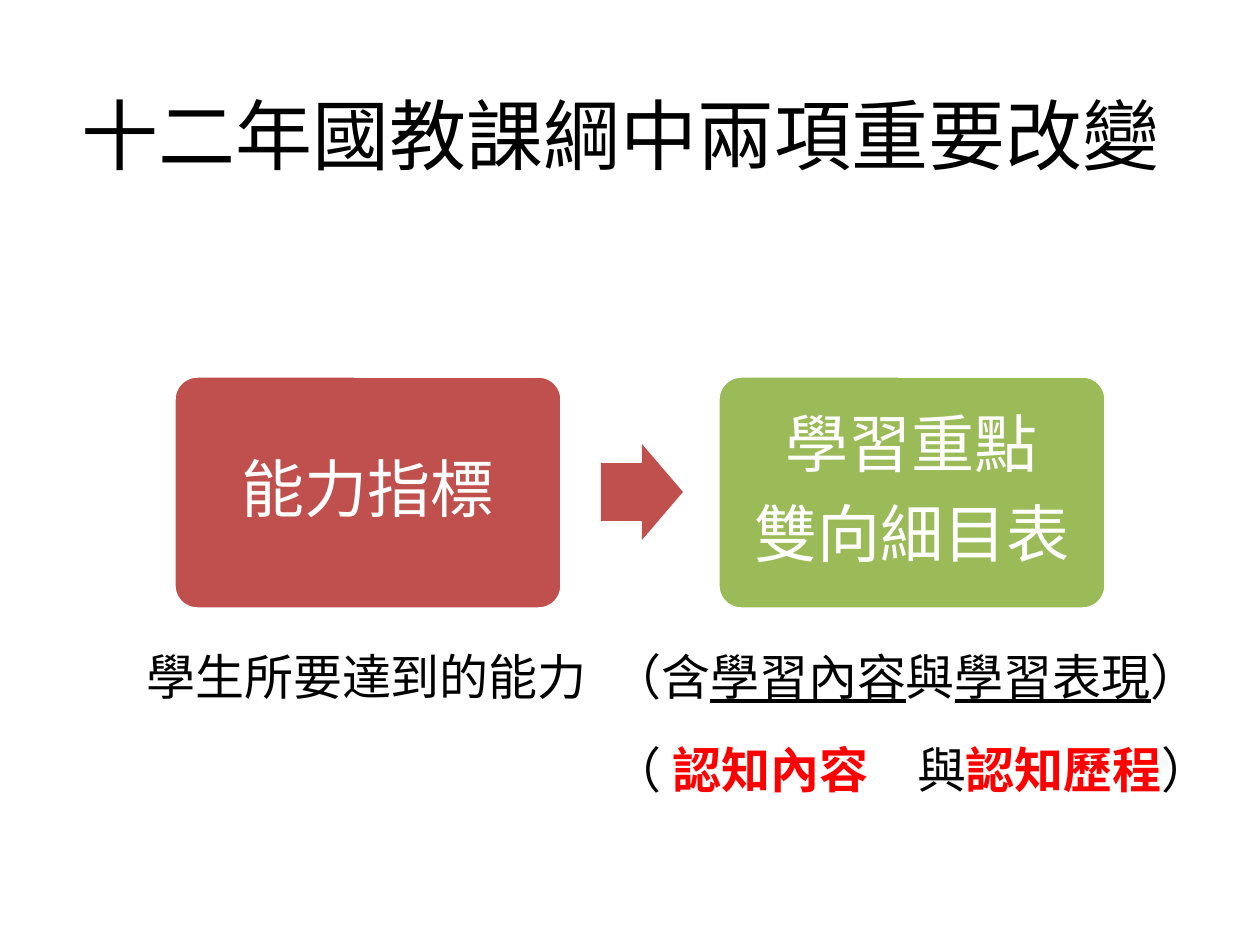
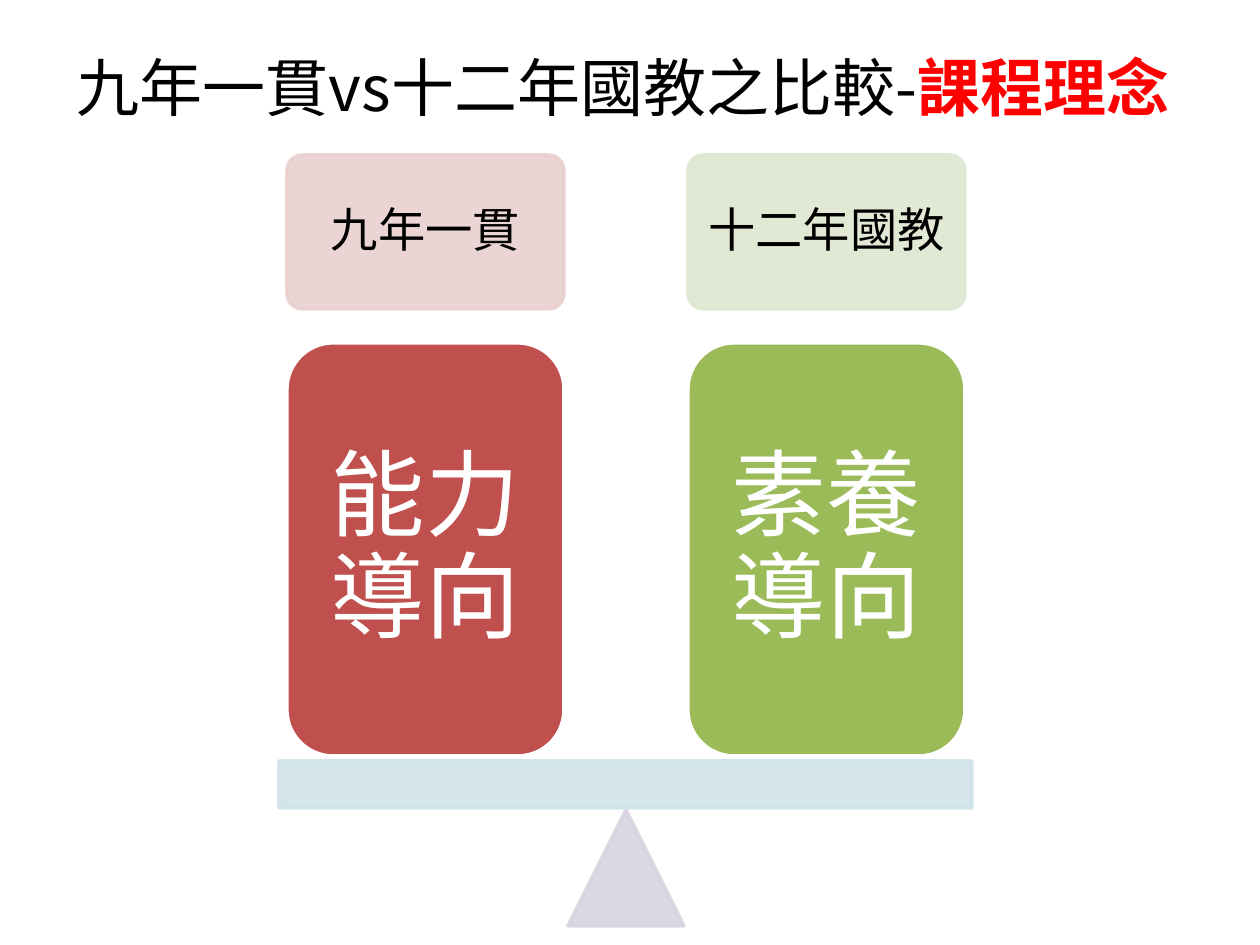
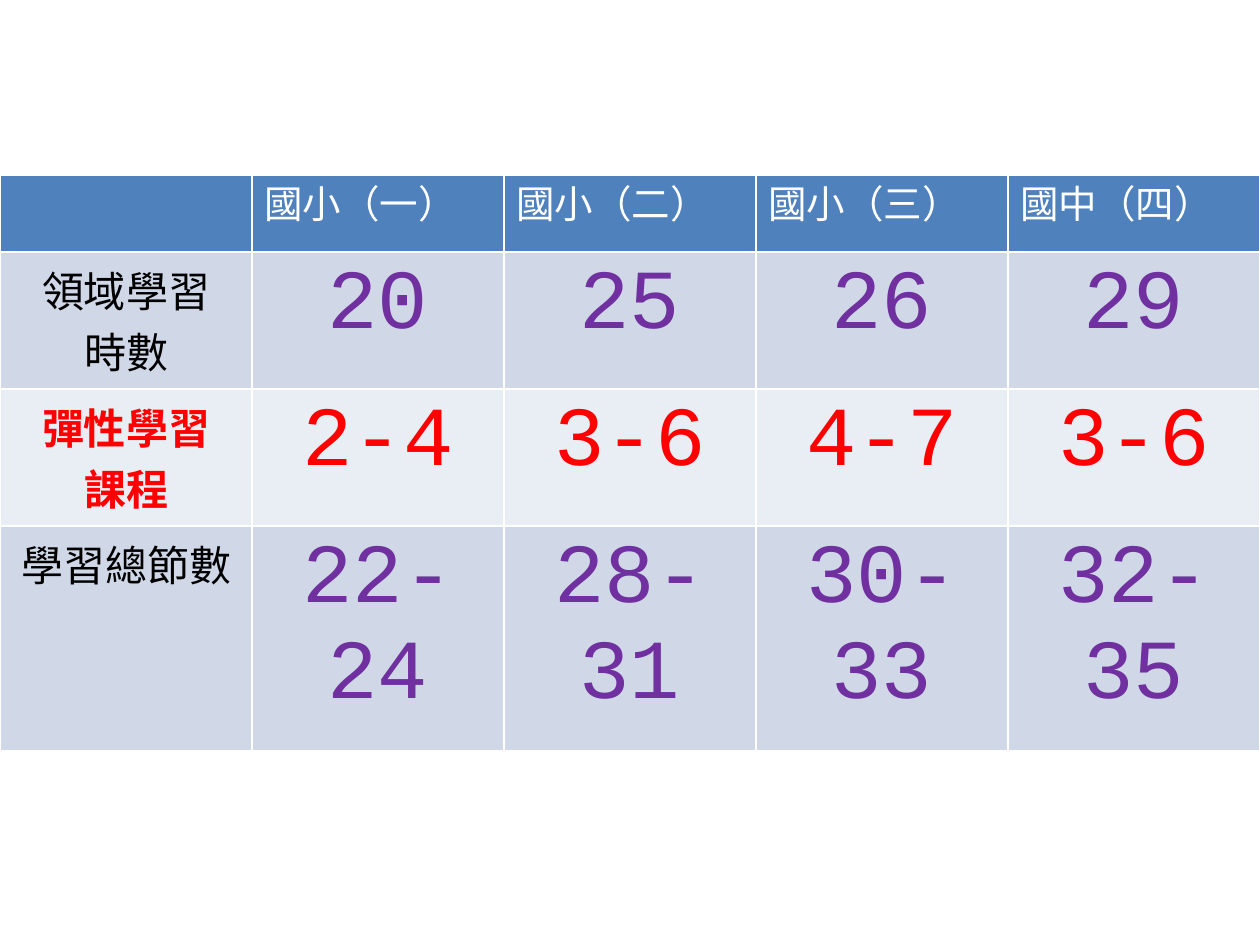
"""Build three slides on the changes brought by the twelve-year curriculum."""
from lxml import etree
from pptx import Presentation
from pptx import util as u
from pptx.dml.color import RGBColor
from pptx.enum import shapes, text
from pptx.oxml.ns import qn

PX = 914400 / 126
SANS, CJK, MONO = "Calibri", "Noto Sans CJK SC", "Courier New"
BLACK, WHITE, RED, PURPLE = "000000", "FFFFFF", "FF0000", "7030A0"
BRICK, OLIVE, BLUE = "C0504D", "9BBB59", "4F81BD"
PINK, PALE_GREEN, LILAC, PALE_BLUE = "E8D0D0", "DEE7D1", "D8D3E0", "D0E3EA"
BAND_DARK, BAND_LIGHT = "D0D8E8", "E9EDF4"
ROUND, PLAIN = shapes.MSO_SHAPE.ROUNDED_RECTANGLE, shapes.MSO_SHAPE.RECTANGLE
ARROW, TRIANGLE = shapes.MSO_SHAPE.RIGHT_ARROW, shapes.MSO_SHAPE.ISOSCELES_TRIANGLE
CENTER, LEFT = text.PP_ALIGN.CENTER, text.PP_ALIGN.LEFT
UNDERLINED, STRONG = {"underline": True}, {"color": RED, "bold": True}

CHANGES_TITLE = ["十二年國教課綱中兩項重要改變"]
CHANGES = [(174, BRICK, [["能力指標"]]), (718, OLIVE, [["學習重點"], ["雙向細目表"]])]
NOTES = [
    ((134, 582, 510, 149), ["學生所要達到的能力"]),
    ((600, 582, 638, 149), ["（含", ("學習內容", UNDERLINED), "與", ("學習表現", UNDERLINED), "）"]),
    ((600, 675, 638, 149), ["（ ", ("認知內容　", STRONG), "與", ("認知歷程", STRONG), "）"]),
]
IDEAS_TITLE = ["九年一貫vs十二年國教之比較-", ("課程理念", STRONG)]
IDEAS = [(287, "九年一貫", PINK, "能力導向", BRICK), (688, "十二年國教", PALE_GREEN, "素養導向", OLIVE)]
STAGES = ["", "國小（一）", "國小（二）", "國小（三）", "國中（四）"]
HOURS = [
    (["領域學習\n時數", "20", "25", "26", "29"], BAND_DARK, BLACK, PURPLE),
    (["彈性學習\n課程", "2-4", "3-6", "4-7", "3-6"], BAND_LIGHT, RED, RED),
    (["學習總節數", "22-24", "28-31", "30-33", "32-35"], BAND_DARK, BLACK, PURPLE),
]
ROW_HEIGHTS = [77, 137, 137, 225]


def px(length):
    return u.Emu(round(length * PX))


def rgb(value):
    return RGBColor.from_string(value)


def paint(fill, color, alpha=None):
    fill.solid()
    fill.fore_color.rgb = rgb(color)
    if alpha:
        tint = fill._xPr.find(qn("a:solidFill"))[0]
        etree.SubElement(tint, qn("a:alpha")).set("val", str(alpha * 1000))


def write(frame, paragraphs, size, font=SANS, color=BLACK, bold=False, align=CENTER,
          spacing=1.0, after=0, inset=None, anchor=None):
    """Fill a text frame with paragraphs, each a list of strings or (string, format) pairs."""
    frame.word_wrap = True
    if anchor is not None:
        frame.vertical_anchor = anchor
    if inset is not None:
        frame.margin_left = frame.margin_right = frame.margin_top = frame.margin_bottom = px(inset)
    for index, parts in enumerate(paragraphs):
        para = frame.add_paragraph() if index else frame.paragraphs[0]
        para.alignment, para.line_spacing, para.space_after = align, spacing, u.Pt(after)
        for part in parts:
            words, style = part if isinstance(part, tuple) else (part, {})
            for number, line in enumerate(words.split("\n")):
                if number:
                    para.add_line_break()
                span = para.add_run()
                span.text = line
                span.font.size, span.font.name = u.Pt(size), font
                span.font.bold = style.get("bold", bold)
                span.font.underline = style.get("underline", False)
                span.font.color.rgb = rgb(style.get("color", color))
                east = etree.SubElement(span._r.get_or_add_rPr(), qn("a:ea"))
                east.set("typeface", font)


def add_box(page, kind, place, color, line=None, alpha=None, corner=None):
    box = page.shapes.add_shape(kind, *map(px, place))
    box.shadow.inherit = False
    paint(box.fill, color, alpha)
    if line:
        paint(box.line.fill, line, alpha)
        box.line.width = u.Pt(2)
    else:
        box.line.fill.background()
    if corner:
        box.adjustments[0] = corner
    return box


def add_page(deck, parts=None, place=None, **style):
    page = deck.slides.add_slide(deck.slide_layouts[5 if parts else 6])
    if parts:
        title = page.shapes.title
        title.left, title.top, title.width, title.height = map(px, place)
        title.text_frame.auto_size = text.MSO_AUTO_SIZE.NONE
        write(title.text_frame, [parts], anchor=text.MSO_ANCHOR.MIDDLE, **style)
    return page


def build_changes(deck):
    page = add_page(deck, CHANGES_TITLE, (54, 55, 1134, 158), size=44)
    for left, color, lines in CHANGES:
        box = add_box(page, ROUND, (left, 376, 388, 233), color, WHITE, corner=0.1)
        write(box.text_frame, lines, 36, color=WHITE, spacing=0.9, after=12.6, inset=19)
    arrow = add_box(page, ARROW, (601, 444, 82, 96), BRICK)
    arrow.adjustments[0] = 0.6
    for place, parts in NOTES:
        note = page.shapes.add_textbox(*map(px, place))
        write(note.text_frame, [parts], 28, align=LEFT, spacing=2.0)


def build_ideas(deck):
    page = add_page(deck, IDEAS_TITLE, (49, 38, 1148, 110), size=36, font=CJK, spacing=0.82)
    for left, name, tint, idea, color in IDEAS:
        label = add_box(page, ROUND, (left, 155, 277, 154), tint, tint, 90, 0.1)
        write(label.text_frame, [[name]], 27, spacing=0.9, after=9.5, inset=14)
        weight = add_box(page, ROUND, (left, 343, 277, 413), color, WHITE)
        write(weight.text_frame, [[idea]], 54, color=WHITE, spacing=0.9, after=18.9, inset=29)
    add_box(page, TRIANGLE, (568, 810, 116, 116), LILAC, LILAC, 90)
    add_box(page, PLAIN, (279, 761, 693, 47), PALE_BLUE, PALE_BLUE, 90)


def build_hours(deck):
    page = add_page(deck)
    place = (0, 175, 1260, sum(ROW_HEIGHTS))
    table = page.shapes.add_table(len(ROW_HEIGHTS), len(STAGES), *map(px, place)).table
    for row, height in zip(table.rows, ROW_HEIGHTS):
        row.height = px(height)
    rows = [(STAGES, BLUE, WHITE, WHITE)] + HOURS
    for top, (values, band, name_color, value_color) in enumerate(rows):
        for column, value in enumerate(values):
            cell = table.cell(top, column)
            paint(cell.fill, band)
            cell.margin_top = cell.margin_bottom = px(7)
            if top == 0:
                style = {"size": 22, "color": WHITE, "align": LEFT}
            elif column == 0:
                style = {"size": 24, "font": CJK, "color": name_color, "bold": name_color == RED}
            else:
                style = {"size": 48, "font": MONO, "color": value_color}
            if value:
                write(cell.text_frame, [[value]], **style)


def main():
    deck = Presentation()
    deck.slide_width, deck.slide_height = px(1260), px(945)
    build_changes(deck)
    build_ideas(deck)
    build_hours(deck)
    deck.save("out.pptx")


if __name__ == "__main__":
    main()
